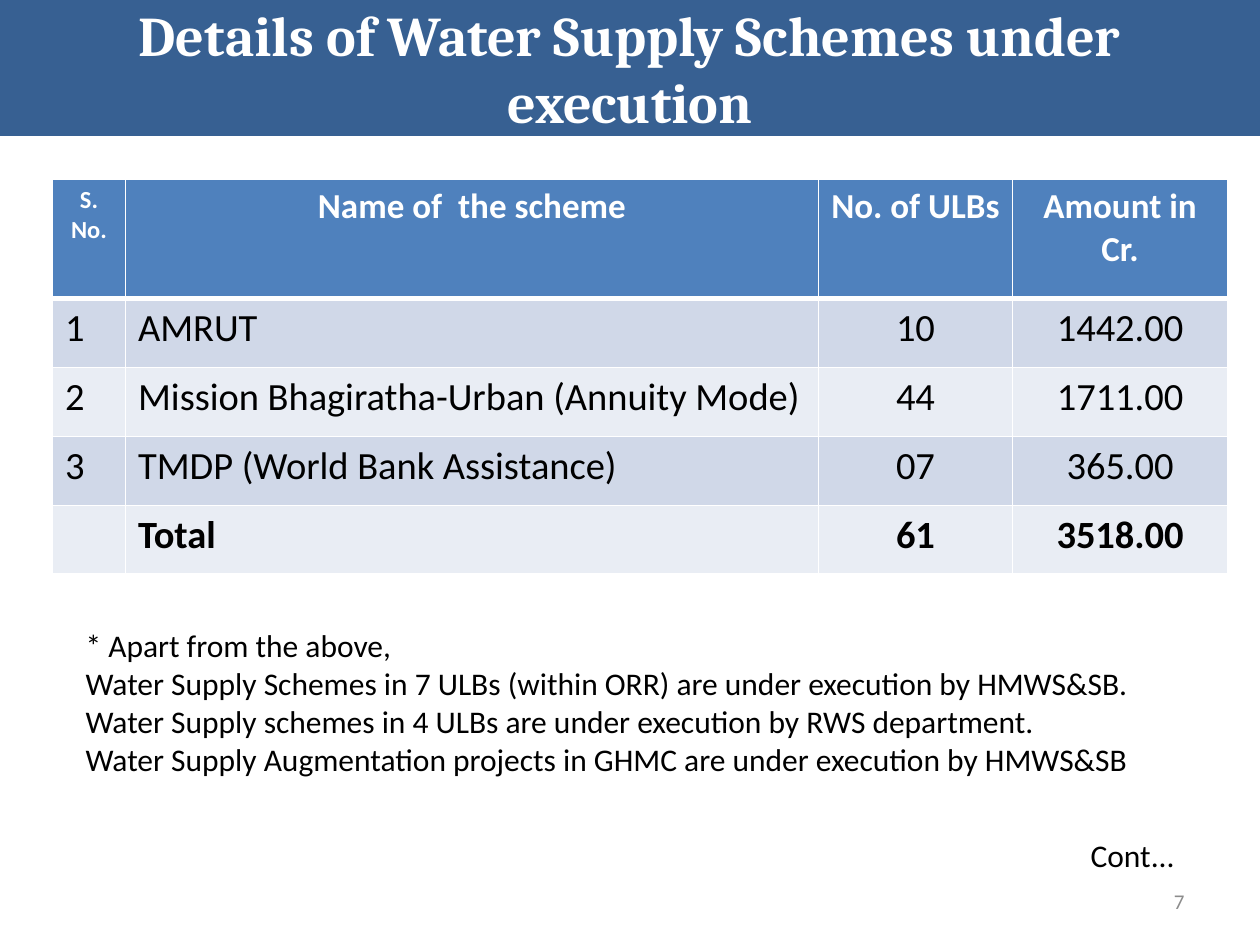
from dataclasses import dataclass

from lxml.etree import SubElement
from pptx import Presentation
from pptx.dml.color import RGBColor
from pptx.enum.text import MSO_ANCHOR, MSO_AUTO_SIZE, PP_ALIGN
from pptx.oxml.ns import qn
from pptx.util import Cm, Pt


@dataclass(frozen=True)
class Theme:
    """Colours, fonts and type sizes of the slide."""

    banner: str = "376092"
    header: str = "4F81BD"
    bands: tuple = ("D0D8E8", "E9EDF4")
    white: str = "FFFFFF"
    black: str = "000000"
    grey: str = "8C8C8C"
    title_font: str = "Cambria"
    body_font: str = "Calibri"
    title_size: int = 32
    cell_size: int = 22
    header_size: int = 20
    note_size: int = 18
    small_header_size: int = 14
    number_size: int = 12


THEME = Theme()
HEADERS = ("S. No.", "Name of  the scheme", "No. of ULBs", "Amount in Cr.")
SCHEMES = (
    ("1", "AMRUT", "10", "1442.00"),
    ("2", "Mission Bhagiratha-Urban (Annuity Mode)", "44", "1711.00"),
    ("3", "TMDP (World Bank Assistance)", "07", "365.00"),
    ("", "Total", "61", "3518.00"),
)
COLUMN_WIDTHS = (1.47, 13.97, 3.91, 4.34)
COLUMN_ALIGNMENTS = (PP_ALIGN.LEFT, PP_ALIGN.LEFT, PP_ALIGN.CENTER, PP_ALIGN.CENTER)
HEADER_HEIGHT, ROW_HEIGHT = 2.41, 1.39
NOTES = (
    "* Apart from the above,",
    "Water Supply Schemes in 7 ULBs (within ORR) are under execution by HMWS&SB.",
    "Water Supply schemes in 4 ULBs are under execution by RWS department.",
    "Water Supply Augmentation projects in GHMC are under execution by HMWS&SB",
)


def place(shape, left, top, width, height):
    """Set the position and size of a shape in centimetres."""
    shape.left, shape.top = Cm(left), Cm(top)
    shape.width, shape.height = Cm(width), Cm(height)


def write(paragraph, text, size, color=THEME.black, bold=False,
          alignment=PP_ALIGN.LEFT, font=THEME.body_font):
    """Add one formatted run to a paragraph."""
    paragraph.alignment = alignment
    run = paragraph.add_run()
    run.text = text
    run.font.name, run.font.size, run.font.bold = font, Pt(size), bold
    run.font.color.rgb = RGBColor.from_string(color)


def set_indent(paragraph, margin, indent):
    """Set the left margin and first-line indent in centimetres."""
    properties = paragraph._p.get_or_add_pPr()
    properties.set("marL", str(Cm(margin)))
    properties.set("indent", str(Cm(indent)))
    return properties


def add_title(slide):
    """Turn the title placeholder into the full-width banner."""
    title = slide.shapes.title
    place(title, 0, 0, 25.4, 2.74)
    title.fill.solid()
    title.fill.fore_color.rgb = RGBColor.from_string(THEME.banner)
    frame = title.text_frame
    frame.auto_size = MSO_AUTO_SIZE.NONE
    frame.vertical_anchor = MSO_ANCHOR.MIDDLE
    write(frame.paragraphs[0], "Details of Water Supply Schemes under execution",
          THEME.title_size, THEME.white, True, PP_ALIGN.CENTER, THEME.title_font)


def style_cell(cell, fill, bottom_width=1):
    """Give a cell white borders and a solid fill."""
    properties = cell._tc.get_or_add_tcPr()
    for side, width in (("L", 1), ("R", 1), ("T", 1), ("B", bottom_width)):
        line = SubElement(properties, qn(f"a:ln{side}"), w=str(Pt(width)))
        SubElement(SubElement(line, qn("a:solidFill")), qn("a:srgbClr"), val=THEME.white)
    cell.fill.solid()
    cell.fill.fore_color.rgb = RGBColor.from_string(fill)


def add_scheme_table(slide):
    """Add the table of schemes with its header and total row."""
    height = HEADER_HEIGHT + len(SCHEMES) * ROW_HEIGHT
    table = slide.shapes.add_table(
        len(SCHEMES) + 1, len(HEADERS), Cm(1.06), Cm(3.61),
        Cm(sum(COLUMN_WIDTHS)), Cm(height)).table
    for column, width in zip(table.columns, COLUMN_WIDTHS):
        column.width = Cm(width)
    for index, row in enumerate(table.rows):
        row.height = Cm(ROW_HEIGHT if index else HEADER_HEIGHT)

    for column, text in enumerate(HEADERS):
        cell = table.cell(0, column)
        style_cell(cell, THEME.header, 3)
        size = THEME.header_size if column else THEME.small_header_size
        write(cell.text_frame.paragraphs[0], text, size, THEME.white, True, PP_ALIGN.CENTER)

    for row, scheme in enumerate(SCHEMES, 1):
        for column, text in enumerate(scheme):
            cell = table.cell(row, column)
            style_cell(cell, THEME.bands[(row - 1) % 2])
            paragraph = cell.text_frame.paragraphs[0]
            if text:
                write(paragraph, text, THEME.cell_size, bold=row == len(SCHEMES),
                      alignment=COLUMN_ALIGNMENTS[column])
            if column == 1:
                set_indent(paragraph, 1.12, -1.12)


def add_notes(slide):
    """Fill the body placeholder with the unbulleted remarks."""
    body = slide.placeholders[1]
    place(body, 1.47, 12.5, 22.23, 3.33)
    frame = body.text_frame
    frame.auto_size = MSO_AUTO_SIZE.NONE
    for index, text in enumerate(NOTES):
        paragraph = frame.add_paragraph() if index else frame.paragraphs[0]
        paragraph.space_before = Pt(0)
        SubElement(set_indent(paragraph, 0, 0), qn("a:buNone"))
        write(paragraph, text, THEME.note_size)


def add_right_label(slide, text, bounds, size, color, anchor):
    """Add a right-aligned text box."""
    box = slide.shapes.add_textbox(*map(Cm, bounds))
    box.text_frame.word_wrap = True
    box.text_frame.vertical_anchor = anchor
    write(box.text_frame.paragraphs[0], text, size, color, alignment=PP_ALIGN.RIGHT)


def main():
    """Build and save the slide."""
    presentation = Presentation()
    presentation.slide_width, presentation.slide_height = Cm(25.4), Cm(19.05)
    slide = presentation.slides.add_slide(presentation.slide_layouts[1])
    add_title(slide)
    add_scheme_table(slide)
    add_right_label(slide, "7", (18.2, 17.66, 5.93, 1.01),
                    THEME.number_size, THEME.grey, MSO_ANCHOR.MIDDLE)
    add_notes(slide)
    add_right_label(slide, "Cont...", (19.05, 16.72, 4.88, 1.06),
                    THEME.note_size, THEME.black, MSO_ANCHOR.TOP)
    presentation.save("out.pptx")


if __name__ == "__main__":
    main()
